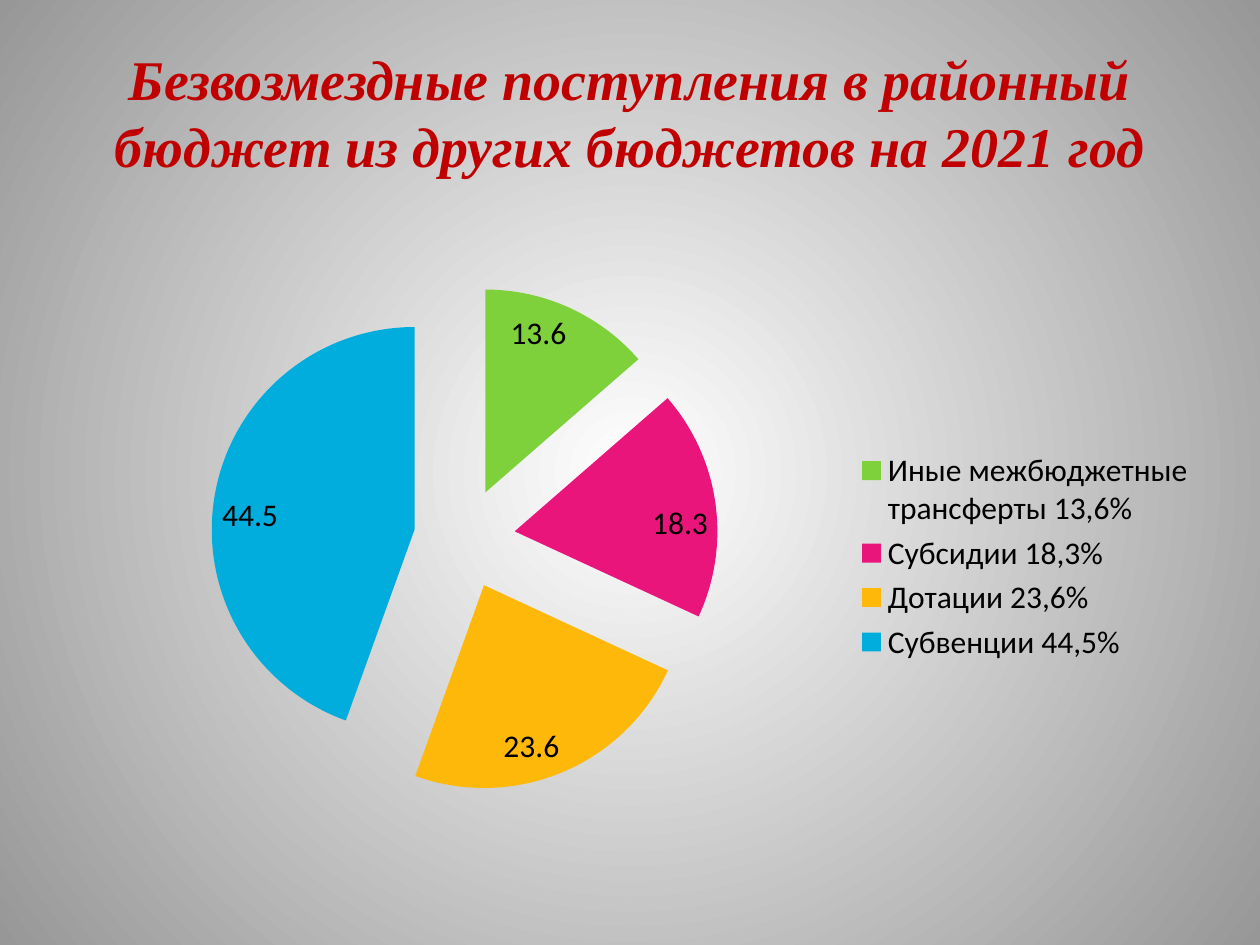
import pptx
import pptx.chart.data
import pptx.dml.color
import pptx.enum.chart
import pptx.enum.text
import pptx.oxml
import pptx.oxml.ns
import pptx.util
from pptx.util import Cm

COLORS = {
    "center": "FFFFFF", "edge": "979797", "title": "C00000", "text": "000000",
    "transfers": "7FD13B", "subsidies": "EA157A",
    "grants": "FEB80A", "subventions": "00ADDC",
}

INCOME = [
    ("Иные межбюджетные трансферты 13,6%", 13.6, "transfers"),
    ("Субсидии 18,3%", 18.3, "subsidies"),
    ("Дотации 23,6%", 23.6, "grants"),
    ("Субвенции 44,5%", 44.5, "subventions"),
]


def rgb(name):
    return pptx.dml.color.RGBColor.from_string(COLORS[name])


def qn(tag):
    return pptx.oxml.ns.qn(tag)


def xml(tag, content="", attributes=""):
    namespaces = pptx.oxml.ns.nsdecls(tag.split(":")[0])
    return pptx.oxml.parse_xml(f"<{tag} {namespaces} {attributes}>{content}</{tag}>")


class BudgetSlide:
    title_font = "Times New Roman"
    chart_font = "Calibri"

    def __init__(self, page):
        self.page = page

    def background(self):
        fill = self.page.background.fill
        fill.gradient()
        for stop, name in zip(fill.gradient_stops, ("center", "edge")):
            stop.color.rgb = rgb(name)
        # Turn the linear gradient into a circle around the middle
        gradient = self.page.element.find(".//" + qn("a:gradFill"))
        middle = '<a:fillToRect l="50000" t="50000" r="50000" b="50000"/>'
        gradient.replace(gradient.find(qn("a:lin")),
                         xml("a:path", middle, 'path="circle"'))

    def title(self, text, left, top, width, height):
        box = self.page.shapes.title
        box.left, box.top, box.width, box.height = map(Cm, (left, top, width, height))
        box.text_frame.vertical_anchor = pptx.enum.text.MSO_ANCHOR.MIDDLE
        para = box.text_frame.paragraphs[0]
        para.alignment = pptx.enum.text.PP_ALIGN.CENTER
        span = para.add_run()
        span.text = text
        span.font.name = self.title_font
        span.font.size = pptx.util.Pt(32)
        span.font.bold = span.font.italic = True
        span.font.color.rgb = rgb("title")

    def pie(self, rows, left, top, width, height, plot_area, explosion):
        data = pptx.chart.data.CategoryChartData()
        data.categories = [label for label, _, _ in rows]
        data.add_series("Series 1", [value for _, value, _ in rows])
        chart = self.page.shapes.add_chart(
            pptx.enum.chart.XL_CHART_TYPE.PIE,
            *map(Cm, (left, top, width, height)), data).chart
        chart.has_title = False
        chart.font.name = self.chart_font
        chart.font.size = pptx.util.Pt(18)
        chart.font.color.rgb = rgb("text")

        # Legend
        chart.has_legend = True
        chart.legend.position = pptx.enum.chart.XL_LEGEND_POSITION.RIGHT
        chart.legend.include_in_layout = False

        # Slices and their values
        plot = chart.plots[0]
        plot.vary_by_categories = True
        for index, (_, _, color) in enumerate(rows):
            fill = plot.series[0].points[index].format.fill
            fill.solid()
            fill.fore_color.rgb = rgb(color)
        plot.has_data_labels = True
        plot.data_labels.show_value = True
        plot.data_labels.show_percentage = False
        plot.data_labels.position = pptx.enum.chart.XL_LABEL_POSITION.INSIDE_END

        # Gap between the slices
        series = chart.element.find(".//" + qn("c:ser"))
        series.find(qn("c:dPt")).addprevious(
            xml("c:explosion", attributes=f'val="{explosion}"'))

        # Fixed place of the pie inside the chart
        area = chart.element.find(".//" + qn("c:plotArea"))
        for layout in area.findall(qn("c:layout")):
            area.remove(layout)
        parts = [("layoutTarget", "inner"), ("xMode", "edge"), ("yMode", "edge")]
        parts += zip("xywh", plot_area)
        manual = "".join(f'<c:{key} val="{value}"/>' for key, value in parts)
        area.insert(0, xml("c:layout", f"<c:manualLayout>{manual}</c:manualLayout>"))


def main():
    deck = pptx.Presentation()
    deck.slide_width, deck.slide_height = Cm(25.4), Cm(19.05)
    slide = BudgetSlide(deck.slides.add_slide(deck.slide_layouts[5]))
    slide.background()
    slide.title("Безвозмездные поступления в районный бюджет "
                "из других бюджетов на 2021 год", 1.27, 0.76, 22.86, 2.97)
    slide.pie(INCOME, 1.5, 4.93, 22.86, 12.57,
              plot_area=(0.06, 0.065, 0.568, 0.813), explosion=25)
    deck.save("out.pptx")


if __name__ == "__main__":
    main()
